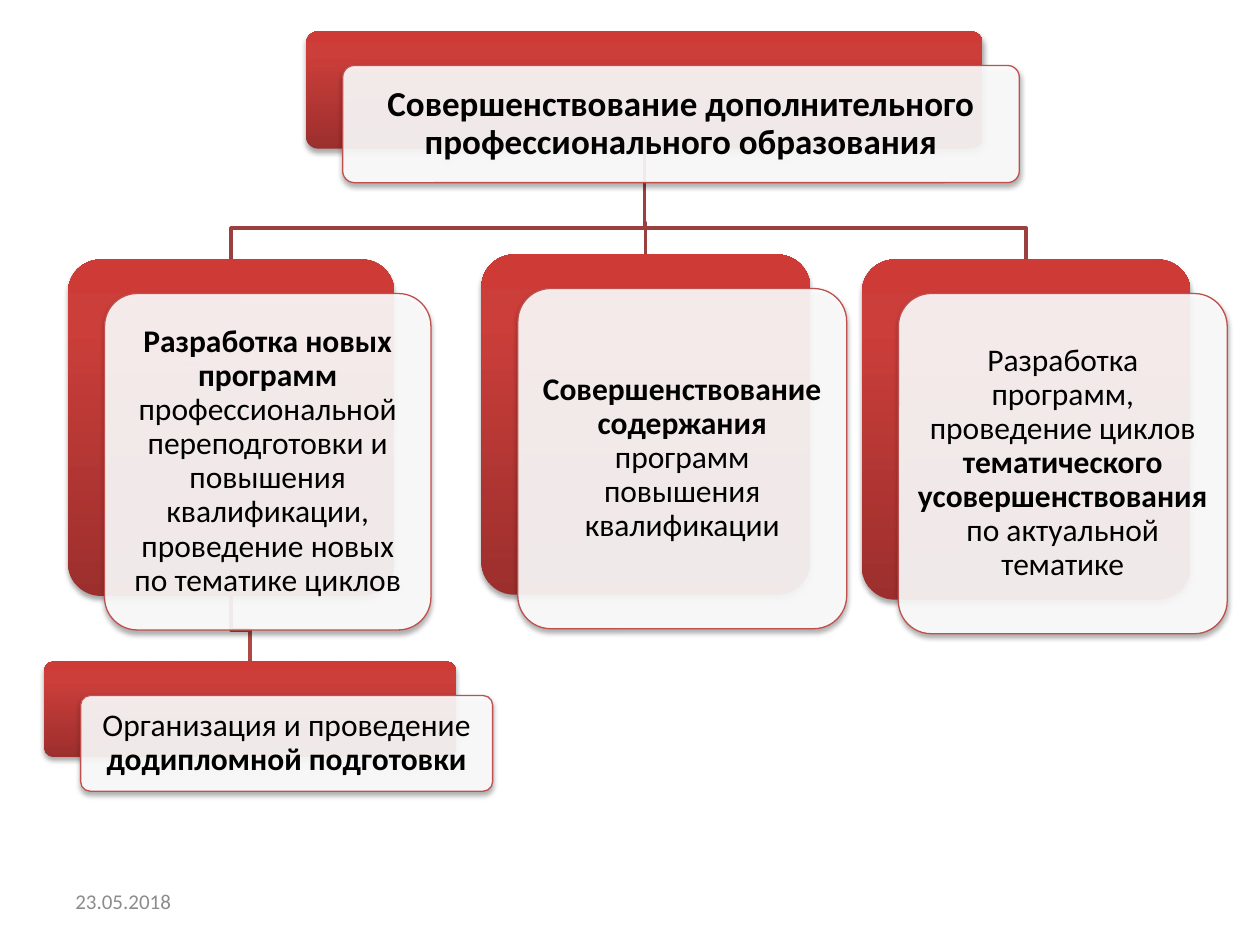
from collections import namedtuple
from copy import deepcopy

from lxml.etree import SubElement
from pptx import Presentation
from pptx.dml.color import RGBColor
from pptx.enum.shapes import MSO_SHAPE
from pptx.enum.text import MSO_ANCHOR, PP_ALIGN
from pptx.oxml.ns import qn
from pptx.util import Inches, Pt

COLUMNS, ROWS = 100, 75
CELL = Inches(10) // COLUMNS
OFFSET_X, OFFSET_Y = 2.9, 2.7
BEND_ABOVE_CHILD = 2.5
CORNER = 0.1

BLACK = RGBColor(0x00, 0x00, 0x00)
WHITE = RGBColor(0xFF, 0xFF, 0xFF)
GREY = RGBColor(0x8C, 0x8C, 0x8C)
RED = RGBColor(0xC0, 0x50, 0x4D)
BRANCH = RGBColor(0x9A, 0x40, 0x3E)
SUBBRANCH = RGBColor(0xAE, 0x49, 0x46)
GRADIENT = (
    (0, RGBColor(0x9C, 0x2F, 0x2D)),
    (0.8, RGBColor(0xCB, 0x3E, 0x3A)),
    (1, RGBColor(0xCE, 0x3B, 0x37)),
)

Node = namedtuple("Node", "left top width height size margin runs")

ROOT = Node(24.3, 2.5, 53.7, 9.3, 20, 0.8, [
    ("Совершенствование дополнительного профессионального образования", True),
])
NEW_PROGRAMS = Node(5.4, 20.6, 25.9, 26.7, 18, 0.7, [
    ("Разработка новых программ ", True),
    ("профессиональной переподготовки и повышения квалификации, "
     "проведение новых по тематике циклов", False),
])
CONTENT = Node(38.2, 20.2, 26.1, 27, 18, 0.7, [
    ("Совершенствование содержания ", True),
    ("программ повышения квалификации", False),
])
THEMATIC = Node(68.4, 20.6, 26.1, 27, 18, 0.7, [
    ("Разработка программ, проведение циклов ", False),
    ("тематического усовершенствования ", True),
    ("по актуальной тематике", False),
])
UNDERGRADUATE = Node(3.5, 52.5, 32.7, 7.6, 18, 0.7, [
    ("Организация и проведение ", False),
    ("додипломной подготовки", True),
])


def grid(cells):
    return round(cells * CELL)


def apply(target, values):
    for attribute, value in values.items():
        setattr(target, attribute, value)


def write_run(paragraph, text, size, color, bold=False):
    run = paragraph.add_run()
    run.text = text
    apply(run.font, {"name": "Calibri", "size": Pt(size), "bold": bold})
    run.font.color.rgb = color


def set_shadow(panel):
    panel.shadow.inherit = False
    effects = panel._element.spPr.find(qn("a:effectLst"))
    shadow = SubElement(effects, qn("a:outerShdw"), blurRad=str(Pt(3.1)),
                        dist=str(Pt(1.8)), dir="5400000", rotWithShape="0")
    black = SubElement(shadow, qn("a:srgbClr"), val=str(BLACK))
    SubElement(black, qn("a:alpha"), val="35000")


def fill_gradient(panel):
    panel.fill.gradient()
    panel.fill.gradient_angle = 90
    stops = panel._element.spPr.find(qn("a:gradFill")).find(qn("a:gsLst"))
    stops.append(deepcopy(stops[0]))
    for stop, (position, color) in zip(panel.fill.gradient_stops, GRADIENT):
        stop.position = position
        stop.color.rgb = color


def add_panel(slide, left, top, width, height):
    panel = slide.shapes.add_shape(
        MSO_SHAPE.ROUNDED_RECTANGLE, *map(grid, (left, top, width, height)))
    panel.adjustments[0] = CORNER
    set_shadow(panel)
    return panel


def add_node(slide, node):
    backing = add_panel(slide, *node[:4])
    fill_gradient(backing)
    backing.line.fill.background()

    card = add_panel(slide, node.left + OFFSET_X, node.top + OFFSET_Y,
                     node.width, node.height)
    card.fill.solid()
    card.fill.fore_color.rgb = WHITE
    tint = card._element.spPr.find(qn("a:solidFill"))[0]
    SubElement(tint, qn("a:alpha"), val="90000")
    card.line.color.rgb = RED
    card.line.width = Pt(0.75)

    frame = card.text_frame
    margin = grid(node.margin)
    apply(frame, {"word_wrap": True, "vertical_anchor": MSO_ANCHOR.MIDDLE,
                  "margin_left": margin, "margin_right": margin,
                  "margin_top": margin, "margin_bottom": margin})
    paragraph = frame.paragraphs[0]
    apply(paragraph, {"alignment": PP_ALIGN.CENTER, "line_spacing": 0.9})
    for text, bold in node.runs:
        write_run(paragraph, text, node.size, BLACK, bold)


def add_branch(slide, parent, child, color):
    start_x = parent.left + parent.width / 2
    end_x = child.left + child.width / 2
    bend_y = child.top - BEND_ABOVE_CHILD
    route = [(start_x, bend_y), (end_x, bend_y), (end_x, child.top)]
    builder = slide.shapes.build_freeform(
        grid(start_x), grid(parent.top + parent.height))
    builder.add_line_segments(
        [(grid(x), grid(y)) for x, y in route], close=False)
    branch = builder.convert_to_shape()
    branch.fill.background()
    branch.shadow.inherit = False
    branch.line.color.rgb = color
    branch.line.width = Pt(2)


def add_date(slide, text):
    date = slide.shapes.add_textbox(*map(grid, (5, 69.5, 23.3, 4)))
    apply(date.text_frame, {"word_wrap": True,
                            "vertical_anchor": MSO_ANCHOR.MIDDLE})
    write_run(date.text_frame.paragraphs[0], text, 12, GREY)


def main():
    presentation = Presentation()
    apply(presentation, {"slide_width": grid(COLUMNS),
                         "slide_height": grid(ROWS)})
    slide = presentation.slides.add_slide(presentation.slide_layouts[6])

    add_branch(slide, NEW_PROGRAMS, UNDERGRADUATE, SUBBRANCH)
    for direction in (NEW_PROGRAMS, CONTENT, THEMATIC):
        add_branch(slide, ROOT, direction, BRANCH)
    for node in (ROOT, THEMATIC, CONTENT, NEW_PROGRAMS, UNDERGRADUATE):
        add_node(slide, node)
    add_date(slide, "23.05.2018")

    presentation.save("out.pptx")


if __name__ == "__main__":
    main()
